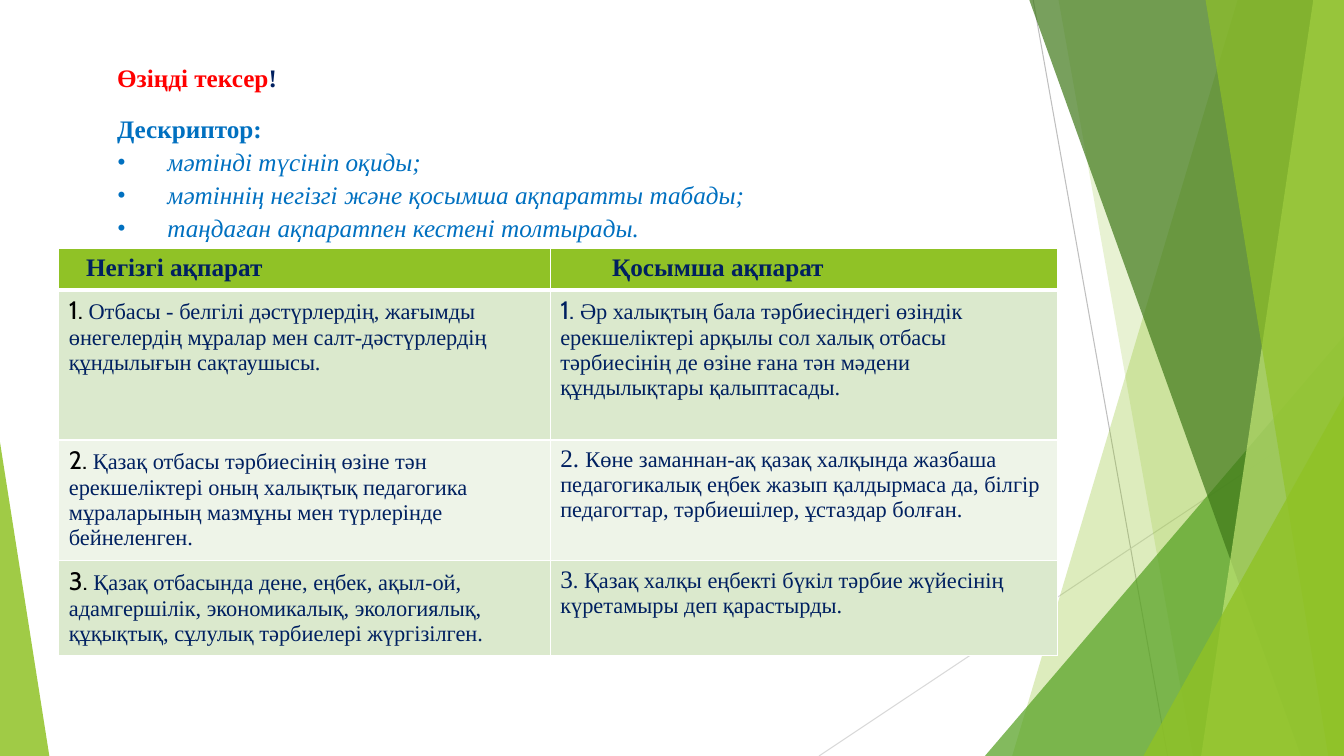
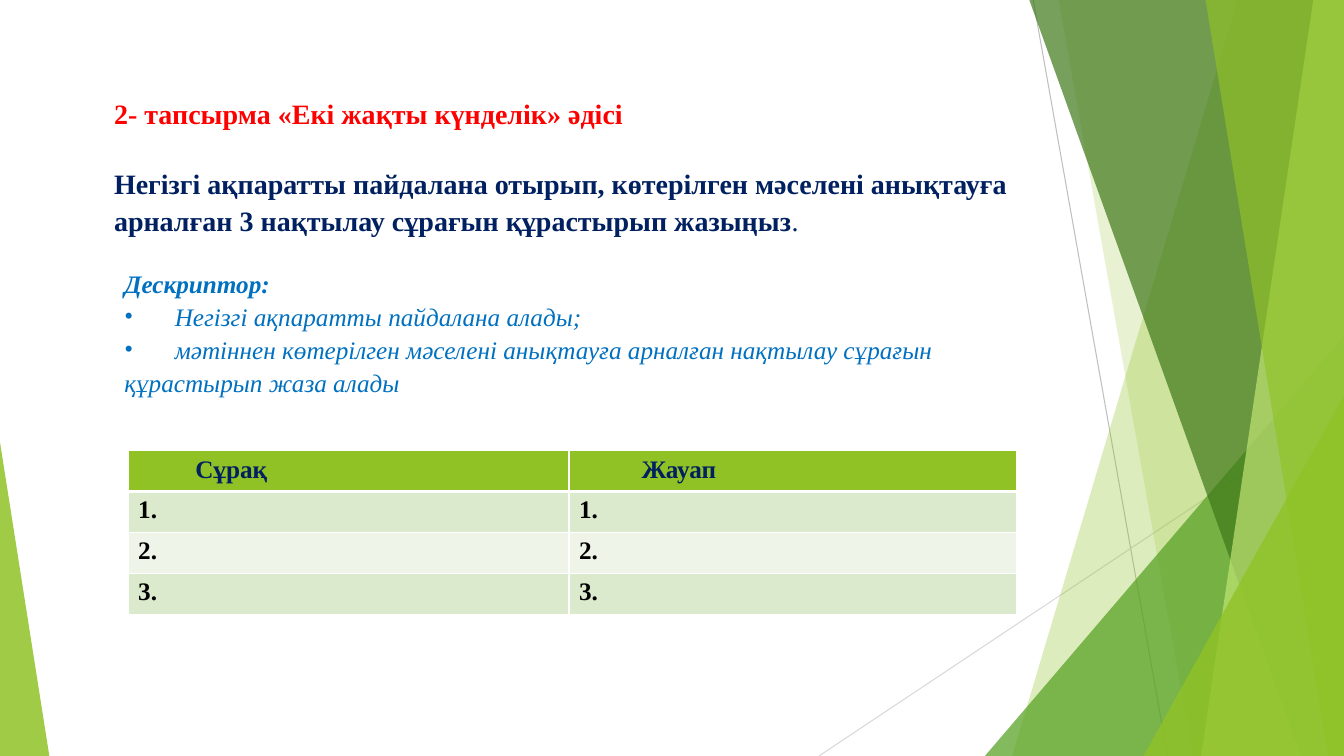
from lxml import etree
from pptx import Presentation
from pptx.dml.color import RGBColor
from pptx.enum.shapes import MSO_CONNECTOR, MSO_SHAPE
from pptx.enum.text import MSO_ANCHOR, MSO_AUTO_SIZE, PP_ALIGN
from pptx.oxml.ns import qn
from pptx.util import Emu, Pt

STRAIGHT = MSO_CONNECTOR.STRAIGHT
TRIANGLE = MSO_SHAPE.ISOSCELES_TRIANGLE
TOP = MSO_ANCHOR.TOP
NO_FIT = MSO_AUTO_SIZE.NONE
LEFT = PP_ALIGN.LEFT

EMU_PER_PX = 9525
SLIDE_WIDTH, SLIDE_HEIGHT = 1280, 720
TITLE_ONLY = 5
BULLET_TAB = 48

WHITE = RGBColor(0xFF, 0xFF, 0xFF)
BLACK = RGBColor(0x00, 0x00, 0x00)
RED = RGBColor(0xFF, 0x00, 0x00)
NAVY = RGBColor(0x00, 0x20, 0x60)
BLUE = RGBColor(0x00, 0x70, 0xC0)
LIME = RGBColor(0x90, 0xC2, 0x26)
PALE_LIME = RGBColor(0xC0, 0xE4, 0x74)
GREEN = RGBColor(0x54, 0xA0, 0x21)
DARK_GREEN = RGBColor(0x3F, 0x78, 0x19)
BAND_DARK = RGBColor(0xDB, 0xE9, 0xCD)
BAND_LIGHT = RGBColor(0xEE, 0xF4, 0xE8)
GREY = RGBColor(0xBF, 0xBF, 0xBF)
LIGHT_GREY = RGBColor(0xD9, 0xD9, 0xD9)

SERIF = "Times New Roman"
SANS = "Cabin"


def text_format(size, color, bold=False, italic=False, name=SERIF):
    return {"size": Pt(size), "color": color, "bold": bold, "italic": italic, "name": name}


TASK_TITLE = text_format(20, RED, bold=True)
TASK_BOLD = text_format(20, NAVY, bold=True)
TASK_PLAIN = text_format(20, NAVY)
CHECK_TITLE = text_format(18, RED, bold=True)
HEADER = text_format(18, NAVY, bold=True)
DESCRIPTOR = text_format(18, BLUE, bold=True)
DESCRIPTOR_ITALIC = text_format(18, BLUE, bold=True, italic=True)
BULLET = text_format(18, BLUE, italic=True)
BODY = text_format(16, NAVY)
NUMBER_BLACK = text_format(18, BLACK, name=SANS)
NUMBER_NAVY = text_format(18, NAVY, name=SANS)
NUMBER_SERIF = text_format(18, NAVY)
NUMBER_BOLD = text_format(18, BLACK, bold=True)

BACKDROP_LINES = [
    ((984, 0, 1112, 720), GREY),
    ((1280, 387, 780, 720), LIGHT_GREY),
]
BACKDROP_PANELS = [
    ("facet", (1179, 964), LIME, 30),
    ("facet", (1008, 1136), LIME, 20),
    ("triangle", (938, 320, 342, 400, 1), GREEN, 72),
    ("facet", (980, 1239), DARK_GREEN, 70),
    ("facet", (1251, 1144), PALE_LIME, 70),
    ("facet", (1148, 1265), LIME, 65),
    ("triangle", (1089, 377, 191, 343, 1), LIME, 80),
    ("triangle", (0, 421, 47, 299, 0), LIME, 85),
]

CHECK_ROWS = [
    [
        [("1. ", NUMBER_BLACK), ("Отбасы - белгілі дәстүрлердің, жағымды өнегелердің мұралар мен "
                                 "салт-дәстүрлердің құндылығын сақтаушысы.", BODY)],
        [("1. ", NUMBER_NAVY), ("Әр халықтың бала тәрбиесіндегі өзіндік ерекшеліктері арқылы сол халық "
                                "отбасы тәрбиесінің де өзіне ғана тән мәдени құндылықтары қалыптасады.", BODY)],
    ],
    [
        [("2. ", NUMBER_BLACK), ("Қазақ отбасы тәрбиесінің өзіне тән ерекшеліктері оның халықтық педагогика "
                                 "мұраларының мазмұны мен түрлерінде бейнеленген.", BODY)],
        [("2. ", NUMBER_SERIF), ("Көне заманнан-ақ қазақ халқында жазбаша педагогикалық еңбек жазып "
                                 "қалдырмаса да, білгір педагогтар, тәрбиешілер, ұстаздар болған.", BODY)],
    ],
    [
        [("3. ", NUMBER_BLACK), ("Қазақ отбасында дене, еңбек, ақыл-ой, адамгершілік, экономикалық, "
                                 "экологиялық, құқықтық, сұлулық тәрбиелері жүргізілген.", BODY)],
        [("3", NUMBER_SERIF), (". Қазақ халқы еңбекті бүкіл тәрбие жүйесінің күретамыры деп "
                               "қарастырды.", BODY)],
    ],
]


def px(length):
    return Emu(length * EMU_PER_PX)


def fill_shape(shape, color, opacity):
    shape.shadow.inherit = False
    shape.line.fill.background()
    shape.fill.solid()
    shape.fill.fore_color.rgb = color
    color_element = shape.fill._xPr.find(qn("a:solidFill"))[0]
    etree.SubElement(color_element, qn("a:alpha"), val=str(opacity * 1000))


def add_facet(slide, top_x, bottom_x):
    builder = slide.shapes.build_freeform(top_x, -1, EMU_PER_PX)
    builder.add_line_segments(
        [(SLIDE_WIDTH, -1), (SLIDE_WIDTH, SLIDE_HEIGHT), (bottom_x, SLIDE_HEIGHT)], close=True)
    return builder.convert_to_shape()


def add_triangle(slide, left, top, width, height, apex):
    shape = slide.shapes.add_shape(TRIANGLE, px(left), px(top), px(width), px(height))
    shape.adjustments[0] = apex
    return shape


def add_backdrop(slide):
    for ends, color in BACKDROP_LINES:
        connector = slide.shapes.add_connector(STRAIGHT, *map(px, ends))
        connector.line.color.rgb = color
        connector.line.width = Pt(0.75)
        etree.SubElement(connector.element.spPr, qn("a:effectLst"))
    builders = {"facet": add_facet, "triangle": add_triangle}
    for kind, geometry, color, opacity in BACKDROP_PANELS:
        fill_shape(builders[kind](slide, *geometry), color, opacity)


def add_runs(paragraph, runs):
    for text, values in runs:
        run = paragraph.add_run()
        run.text = text
        for name, value in values.items():
            if name == "color":
                run.font.color.rgb = value
            else:
                setattr(run.font, name, value)


def add_bullet(paragraph):
    properties = paragraph._p.get_or_add_pPr()
    properties.set("marL", "0")
    properties.set("indent", "0")
    etree.SubElement(properties, qn("a:buFont"), typeface=SERIF)
    etree.SubElement(properties, qn("a:buChar"), char="•")
    tabs = etree.SubElement(properties, qn("a:tabLst"))
    etree.SubElement(tabs, qn("a:tab"), pos=str(px(BULLET_TAB)), algn="l")


def fill_text(shape, paragraphs, gap=0, wrap=True):
    frame = shape.text_frame
    for name, value in {"word_wrap": wrap, "auto_size": NO_FIT, "vertical_anchor": TOP}.items():
        setattr(frame, name, value)
    for index, runs in enumerate(paragraphs):
        paragraph = frame.add_paragraph() if index else frame.paragraphs[0]
        paragraph.alignment = LEFT
        paragraph.line_spacing = 1.09
        if index and gap:
            paragraph.space_before = Pt(gap)
        if runs[0][1] is BULLET:
            add_bullet(paragraph)
            runs = [("\t" + runs[0][0], BULLET)]
        add_runs(paragraph, runs)


def add_title(slide, box, paragraphs, gap=0, wrap=True):
    title = slide.shapes.title
    for name, value in zip(("left", "top", "width", "height"), box):
        setattr(title, name, px(value))
    fill_text(title, paragraphs, gap, wrap)


def add_descriptor(slide, box, heading_format, bullets):
    shape = slide.shapes.add_textbox(*map(px, box))
    fill_text(shape, [[("Дескриптор:", heading_format)]] + [[(text, BULLET)] for text in bullets])


def add_borders(cell, top, bottom):
    properties = cell._tc.get_or_add_tcPr()
    sides = [("lnL", 1), ("lnR", 1), ("lnT", top), ("lnB", bottom)]
    for index, (side, width) in enumerate(sides):
        line = etree.Element(qn("a:" + side), w=str(Pt(width)))
        solid = etree.SubElement(line, qn("a:solidFill"))
        etree.SubElement(solid, qn("a:srgbClr"), val=str(WHITE))
        properties.insert(index, line)


def add_two_column_table(slide, left, top, column_widths, row_heights, headers, indents, body):
    rows = [[[(text, HEADER)] for text in headers]] + body
    box = (left, top, sum(column_widths), sum(row_heights))
    table = slide.shapes.add_table(len(rows), len(headers), *map(px, box)).table
    table.horz_banding = False
    for column, width in zip(table.columns, column_widths):
        column.width = px(width)
    for row_index, (row, height) in enumerate(zip(rows, row_heights)):
        table.rows[row_index].height = px(height)
        color = LIME if row_index == 0 else (BAND_LIGHT, BAND_DARK)[row_index % 2]
        for column_index, runs in enumerate(row):
            cell = table.cell(row_index, column_index)
            cell.fill.solid()
            cell.fill.fore_color.rgb = color
            add_borders(cell, 3 if row_index == 1 else 1, 3 if row_index == 0 else 1)
            if row_index == 0:
                cell.margin_left = px(indents[column_index])
            add_runs(cell.text_frame.paragraphs[0], runs)


def add_slide(presentation):
    slide = presentation.slides.add_slide(presentation.slide_layouts[TITLE_ONLY])
    add_backdrop(slide)
    return slide


def build_check_slide(presentation):
    slide = add_slide(presentation)
    add_title(slide, (102, 52, 173, 38), [[("Өзіңді тексер", CHECK_TITLE), ("!", HEADER)]], wrap=False)
    add_descriptor(slide, (102, 101, 660, 126), DESCRIPTOR, [
        "мәтінді түсініп оқиды;",
        "мәтіннің негізгі және қосымша ақпаратты табады;",
        "таңдаған ақпаратпен кестені толтырады.",
    ])
    add_two_column_table(slide, 56, 237, (468, 483), (39, 143, 115, 90),
                         ("Негізгі ақпарат", "Қосымша ақпарат"), (26, 59), CHECK_ROWS)


def build_diary_slide(presentation):
    slide = add_slide(presentation)
    add_title(slide, (99, 84, 883, 139), [
        [("2- тапсырма «Екі жақты күнделік» әдісі", TASK_TITLE)],
        [("Негізгі ақпаратты пайдалана отырып, көтерілген мәселені анықтауға арналған "
          "3 нақтылау сұрағын құрастырып жазыңыз", TASK_BOLD), (".", TASK_PLAIN)],
    ], gap=24)
    add_descriptor(slide, (109, 248, 810, 156), DESCRIPTOR_ITALIC, [
        "Негізгі ақпаратты пайдалана алады;",
        "мәтіннен көтерілген мәселені анықтауға арналған нақтылау сұрағын құрастырып жаза алады",
    ])
    numbered_rows = [[[(f"{number}.", NUMBER_BOLD)]] * 2 for number in range(1, 4)]
    add_two_column_table(slide, 122, 429, (420, 426), (39,) * 4,
                         ("Сұрақ", "Жауап"), (64, 69), numbered_rows)


def main():
    presentation = Presentation()
    presentation.slide_width = px(SLIDE_WIDTH)
    presentation.slide_height = px(SLIDE_HEIGHT)
    build_check_slide(presentation)
    build_diary_slide(presentation)
    presentation.save("out.pptx")


if __name__ == "__main__":
    main()
